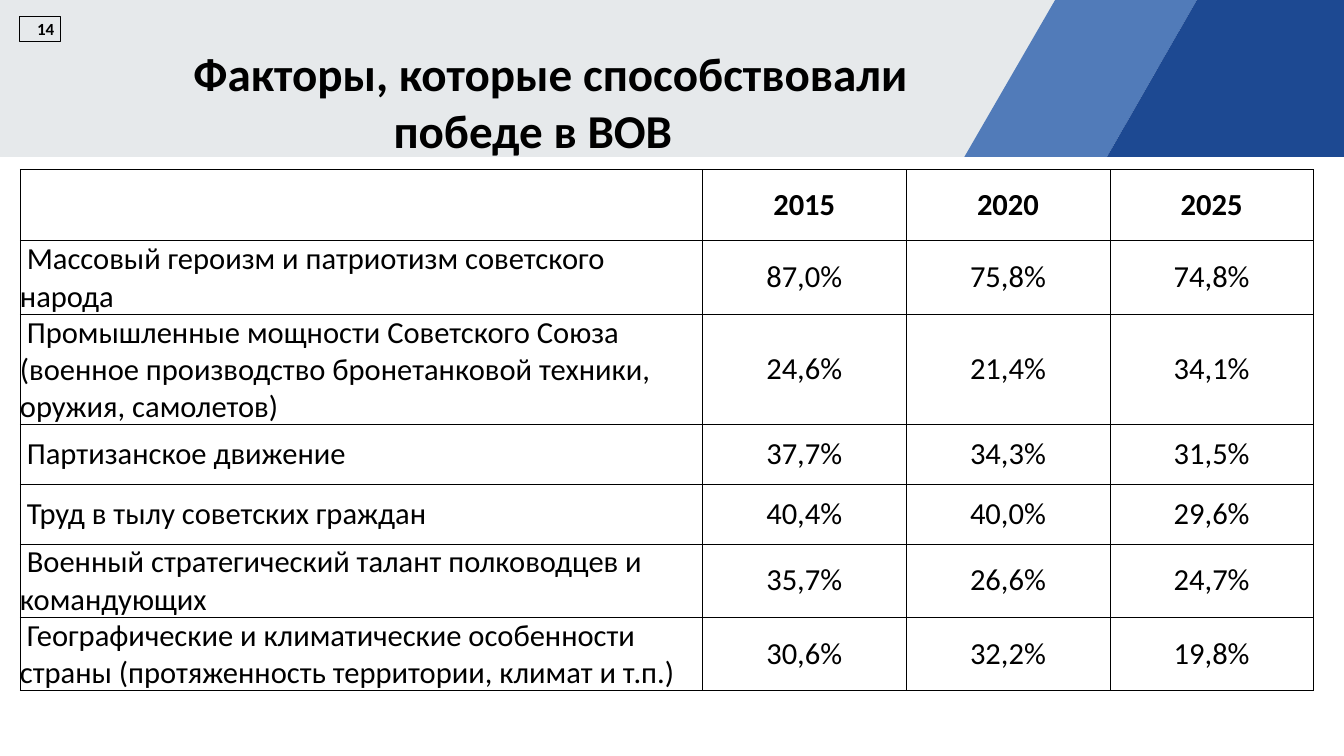
from lxml import etree
from pptx import Presentation
from pptx.dml.color import RGBColor
from pptx.enum.shapes import MSO_SHAPE
from pptx.enum.text import MSO_ANCHOR, PP_ALIGN
from pptx.oxml.ns import qn
from pptx.util import Pt

LEFT, MID, RIGHT = PP_ALIGN.LEFT, PP_ALIGN.CENTER, PP_ALIGN.RIGHT
TOP, CENTER = MSO_ANCHOR.TOP, MSO_ANCHOR.MIDDLE
RECT = MSO_SHAPE.RECTANGLE

BLACK = RGBColor(0x00, 0x00, 0x00)
GRAY = RGBColor(0xE6, 0xE9, 0xEB)
BLUE = RGBColor(0x51, 0x7B, 0xB9)
NAVY = RGBColor(0x1D, 0x49, 0x92)

TITLE = "Факторы, которые способствовали победе в ВОВ"
PAGE = "14"
YEARS = ("", "2015", "2020", "2025")
FACTORS = [
    ("Массовый героизм и патриотизм советского народа", "87,0%", "75,8%", "74,8%"),
    ("Промышленные мощности Советского Союза (военное производство "
     "бронетанковой техники, оружия, самолетов)", "24,6%", "21,4%", "34,1%"),
    ("Партизанское движение", "37,7%", "34,3%", "31,5%"),
    ("Труд в тылу советских граждан", "40,4%", "40,0%", "29,6%"),
    ("Военный стратегический талант полководцев и командующих",
     "35,7%", "26,6%", "24,7%"),
    ("Географические и климатические особенности страны "
     "(протяженность территории, климат и т.п.)", "30,6%", "32,2%", "19,8%"),
]

WIDE, HIGH = 1583.28, 890.64
BAND, SLANT = 185, 106.6
STRIPES = [
    (GRAY, [(0, 0), (1138.3 + SLANT, 0), (1138.3, BAND), (0, BAND)]),
    (BLUE, [(1136.2 + SLANT, 0), (1303.9 + SLANT, 0), (1303.9, BAND), (1136.2, BAND)]),
    (NAVY, [(1303.9 + SLANT, 0), (WIDE, 0), (WIDE, BAND), (1303.9, BAND)]),
]
TITLE_BOX = (95.8, 49, 1064.2, 126)
PAGE_BOX = (23, 18.7, 48.2, 30.2)
GRID = (23.5, 199.4)
COLS = (804, 240, 240, 240)
HEAD, ROW = 84, 70.6
TITLE_FONT = {"name": "Calibri", "size": Pt(55.5), "bold": True}
PAGE_FONT = {"name": "Calibri", "size": Pt(20), "bold": True}
HEAD_FONT = {"name": "Calibri", "size": Pt(36), "bold": True}
BODY_FONT = {**HEAD_FONT, "bold": False}
CELL = {"margin_left": 0, "margin_right": 0, "margin_top": 0,
        "margin_bottom": 0, "vertical_anchor": CENTER}


def apply(item, look):
    for key, value in look.items():
        setattr(item, key, value)


def write(frame, text, font, align, indent=0):
    para = frame.paragraphs[0]
    para.alignment = align
    if indent:
        props = para._p.get_or_add_pPr()
        props.set("marL", "0")
        props.set("indent", str(Pt(indent)))
    run = para.add_run()
    run.text = text
    apply(run.font, font)
    run.font.color.rgb = BLACK


def border(cell):
    props = cell._tc.get_or_add_tcPr()
    for side in ("lnL", "lnR", "lnT", "lnB"):
        line = etree.SubElement(props, qn(f"a:{side}"), w=str(Pt(0.5)))
        fill = etree.SubElement(line, qn("a:solidFill"))
        etree.SubElement(fill, qn("a:srgbClr"), val=str(BLACK))


def draw_band(shapes):
    for color, points in STRIPES:
        build = shapes.build_freeform(*points[0], scale=Pt(1))
        build.add_line_segments(points[1:], close=True)
        stripe = build.convert_to_shape()
        stripe.shadow.inherit = False
        stripe.fill.solid()
        stripe.fill.fore_color.rgb = color
        stripe.line.fill.background()


def draw_heads(shapes):
    title = shapes.add_textbox(*map(Pt, TITLE_BOX)).text_frame
    apply(title, {"word_wrap": True, "vertical_anchor": TOP})
    write(title, TITLE, TITLE_FONT, MID, 42.5)

    page = shapes.add_shape(RECT, *map(Pt, PAGE_BOX))
    page.shadow.inherit = False
    page.fill.background()
    page.line.color.rgb = BLACK
    page.line.width = Pt(0.75)
    page.text_frame.vertical_anchor = CENTER
    write(page.text_frame, PAGE, PAGE_FONT, RIGHT)


def draw_table(shapes):
    rows = [YEARS] + FACTORS
    size = (sum(COLS), HEAD + ROW * len(FACTORS))
    table = shapes.add_table(len(rows), len(COLS), *map(Pt, GRID + size)).table
    apply(table, {"first_row": False, "horz_banding": False})
    for col, width in zip(table.columns, COLS):
        col.width = Pt(width)
    for r, row in enumerate(rows):
        table.rows[r].height = Pt(ROW if r else HEAD)
        for c, text in enumerate(row):
            cell = table.cell(r, c)
            apply(cell, CELL)
            border(cell)
            cell.fill.background()
            if text:
                write(cell.text_frame, text, BODY_FONT if r else HEAD_FONT,
                      MID if c else LEFT, 0 if c else 8.1)


def main():
    deck = Presentation()
    deck.slide_width, deck.slide_height = Pt(WIDE), Pt(HIGH)
    shapes = deck.slides.add_slide(deck.slide_layouts[6]).shapes
    draw_band(shapes)
    draw_heads(shapes)
    draw_table(shapes)
    deck.save("out.pptx")


if __name__ == "__main__":
    main()
